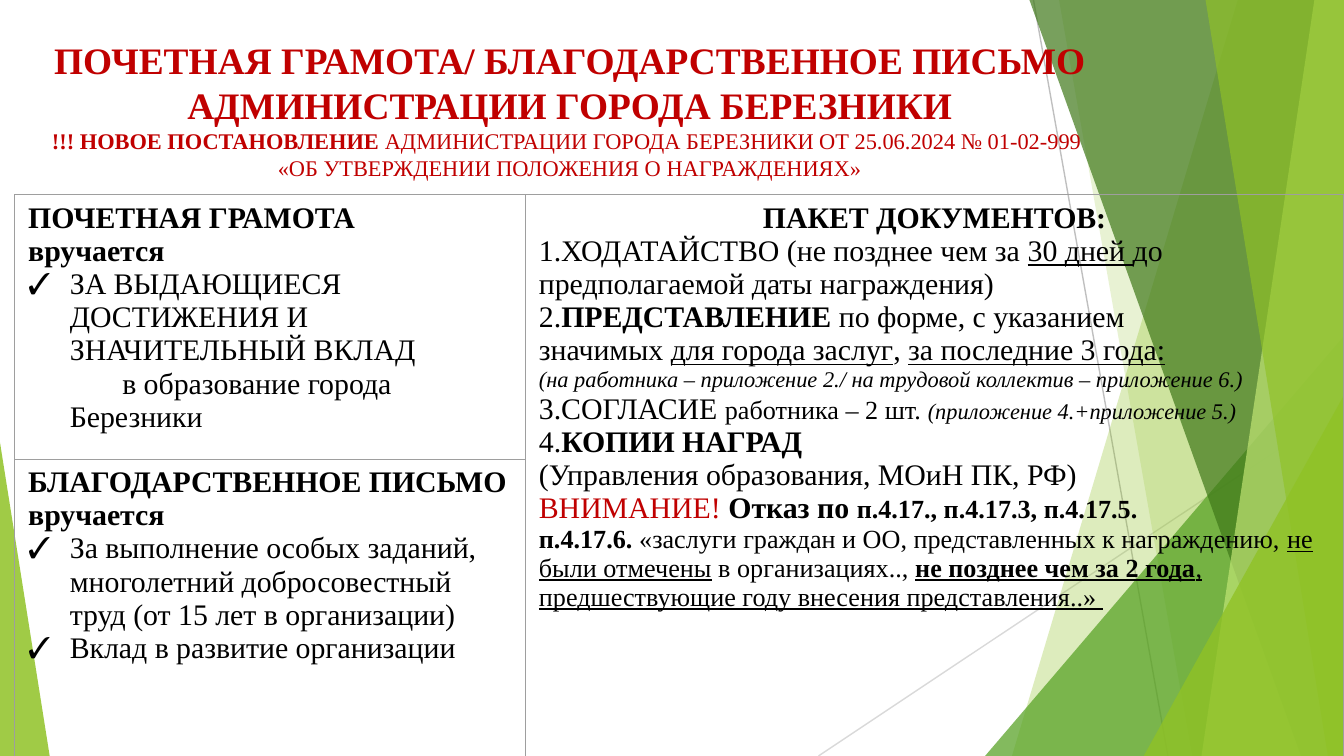
from lxml import etree
from pptx import Presentation
from pptx.dml.color import RGBColor
from pptx.enum.shapes import MSO_CONNECTOR as Connector, MSO_SHAPE as Shape
from pptx.enum.text import PP_ALIGN as Align
from pptx.oxml.ns import qn
from pptx.util import Inches, Pt

FONT = "Times New Roman"
RED, BLACK, GREEN, BORDER = "C00000", "000000", "90C226", "9E9E9E"
WIDTH = 10
HEIGHT = WIDTH * 9 / 16


def color(value):
    return RGBColor.from_string(value)


def paint(shape, fill, opacity):
    """Plain translucent fill without outline or shadow."""
    shape.shadow.inherit = False
    shape.line.fill.background()
    shape.fill.solid()
    shape.fill.fore_color.rgb = color(fill)
    tint = shape.fill._xPr.find(qn("a:solidFill"))[0]
    etree.SubElement(tint, qn("a:alpha"), val=str(opacity * 1000))


def add_line(slide, start, end, stroke):
    ends = [Inches(value) for value in (*start, *end)]
    line = slide.shapes.add_connector(Connector.STRAIGHT, *ends)
    line.line.color.rgb = color(stroke)
    line.line.width = Pt(0.75)
    etree.SubElement(line._element.spPr, qn("a:effectLst"))


def add_band(slide, top_x, bottom_x, fill, opacity):
    """Full-height band from a slanted left edge to the right slide edge."""
    points = [(top_x, 0), (WIDTH, 0), (WIDTH, HEIGHT), (bottom_x, HEIGHT)]
    points = [(Inches(x), Inches(y)) for x, y in points]
    builder = slide.shapes.build_freeform(*points[0])
    builder.add_line_segments(points[1:], close=True)
    paint(builder.convert_to_shape(), fill, opacity)


def add_triangle(slide, left, top, width, apex, fill, opacity):
    """Triangle standing on the bottom edge of the slide."""
    box = [Inches(value) for value in (left, top, width, HEIGHT - top)]
    triangle = slide.shapes.add_shape(Shape.ISOSCELES_TRIANGLE, *box)
    triangle.adjustments[0] = apex
    paint(triangle, fill, opacity)


def add_run(paragraph, text, size=16, style="", ink=BLACK):
    """Style letters: b bold, i italic, u underlined."""
    run = paragraph.add_run()
    run.text = text
    font = run.font
    font.name, font.size = FONT, Pt(size)
    font.bold, font.italic, font.underline = (key in style for key in "biu")
    font.color.rgb = color(ink)


def set_indent(paragraph, margin, first=0):
    properties = paragraph._p.get_or_add_pPr()
    properties.set("marL", str(Inches(margin)))
    properties.set("indent", str(Inches(first)))
    return properties


def fill_text(frame, paragraphs):
    """Each paragraph is a kind and a list of runs."""
    for index, (kind, runs) in enumerate(paragraphs):
        paragraph = frame.add_paragraph() if index else frame.paragraphs[0]
        if kind in ("title", "center"):
            paragraph.alignment = Align.CENTER
        if kind == "title":
            set_indent(paragraph, 0.12)
        elif kind == "check":
            properties = set_indent(paragraph, 0.31, -0.31)
            etree.SubElement(properties, qn("a:buFont"), typeface=FONT)
            etree.SubElement(properties, qn("a:buChar"), char="✓")
        elif kind == "continued":
            set_indent(paragraph, 0.31, 0.39)
        for run in runs:
            add_run(paragraph, *run)


def style_cell(cell):
    cell.fill.background()
    properties = cell._tc.get_or_add_tcPr()
    for index, side in enumerate(("lnL", "lnR", "lnT", "lnB")):
        border = etree.Element(qn(f"a:{side}"), w=str(Pt(0.75)))
        solid = etree.SubElement(border, qn("a:solidFill"))
        etree.SubElement(solid, qn("a:srgbClr"), val=BORDER)
        properties.insert(index, border)


TITLE = [
    ("title", [("ПОЧЕТНАЯ ГРАМОТА/ БЛАГОДАРСТВЕННОЕ ПИСЬМО", 20, "b", RED)]),
    ("title", [("АДМИНИСТРАЦИИ ГОРОДА БЕРЕЗНИКИ", 20, "b", RED)]),
    ("title", [("!!! НОВОЕ ПОСТАНОВЛЕНИЕ", 12, "b", RED),
               (" АДМИНИСТРАЦИИ ГОРОДА БЕРЕЗНИКИ ОТ 25.06.2024 № 01-02-999 ",
                12, "", RED)]),
    ("title", [("«ОБ УТВЕРЖДЕНИИ ПОЛОЖЕНИЯ О НАГРАЖДЕНИЯХ»", 12, "", RED)]),
]
CERTIFICATE = [
    ("plain", [("ПОЧЕТНАЯ ГРАМОТА", 16, "b")]),
    ("plain", [("вручается", 16, "b")]),
    ("check", [("ЗА ВЫДАЮЩИЕСЯ ДОСТИЖЕНИЯ И ЗНАЧИТЕЛЬНЫЙ ВКЛАД",)]),
    ("continued", [("в образование города Березники",)]),
]
GRATITUDE = [
    ("plain", [("БЛАГОДАРСТВЕННОЕ ПИСЬМО вручается", 16, "b")]),
    ("check", [("За выполнение особых заданий, многолетний добросовестный "
                "труд (от 15 лет в организации)",)]),
    ("check", [("Вклад в развитие организации",)]),
]
DOCUMENTS = [
    ("center", [("ПАКЕТ ДОКУМЕНТОВ:", 16, "b")]),
    ("plain", [("1.ХОДАТАЙСТВО (не позднее чем за ",), ("30 дней ", 16, "u"),
               ("до предполагаемой даты награждения)",)]),
    ("plain", [("2.",), ("ПРЕДСТАВЛЕНИЕ", 16, "b"),
               (" по форме, с указанием",)]),
    ("plain", [("значимых ",), ("для города заслуг", 16, "u"), (", ",),
               ("за последние 3 года:", 16, "u")]),
    ("plain", [("(на работника – приложение 2./ на трудовой коллектив – "
                "приложение 6.)", 12, "i")]),
    ("plain", [("3.СОГЛАСИЕ ",), ("работника – 2 шт. ", 14),
               ("(приложение 4.+приложение 5.)", 12, "i")]),
    ("plain", [("4.",), ("КОПИИ НАГРАД", 16, "b")]),
    ("plain", [("(Управления образования, МОиН ПК, РФ)",)]),
    ("plain", [("ВНИМАНИЕ! ", 16, "", RED), ("Отказ по ", 16, "b"),
               ("п.4.17., п.4.17.3, п.4.17.5.", 14, "b")]),
    ("plain", [("п.4.17.6. ", 14, "b"),
               ("«заслуги граждан и ОО, представленных к награждению, ", 14),
               ("не были отмечены", 14, "u"), (" в организациях.., ", 14),
               ("не позднее чем за 2 года", 14, "bu"),
               (", предшествующие году внесения представления..» ", 14, "u")]),
]


def add_background(slide):
    add_line(slide, (7.69, 0), (8.69, HEIGHT), "BFBFBF")
    add_line(slide, (WIDTH, 3.02), (6.09, HEIGHT), "D9D9D9")
    add_band(slide, 9.21, 7.53, GREEN, 30)
    add_band(slide, 7.88, 8.87, GREEN, 20)
    add_triangle(slide, 7.33, 2.5, 2.67, 1, "54A021", 72)
    add_band(slide, 7.66, 9.68, "3F7819", 70)
    add_band(slide, 9.78, 8.94, "C0E474", 70)
    add_band(slide, 8.97, 9.88, GREEN, 65)
    add_triangle(slide, 8.51, 2.94, 1.49, 1, GREEN, 80)
    add_triangle(slide, 0, 3.29, 0.37, 0, GREEN, 85)


def add_title(slide):
    box = [Inches(value) for value in (0.11, 0.18, 8.14, 4.82)]
    frame = slide.shapes.add_textbox(*box).text_frame
    frame.word_wrap = True
    frame.margin_left = frame.margin_right = Inches(0.1)
    frame.margin_top = frame.margin_bottom = Inches(0.1)
    fill_text(frame, TITLE)


def add_award_table(slide):
    columns, rows = (3.8, 6.09), (1.86, 1.92)
    box = [Inches(value) for value in (0.11, 1.45, sum(columns), sum(rows))]
    table = slide.shapes.add_table(2, 2, *box).table
    table.first_row = table.horz_banding = False
    for column, width in zip(table.columns, columns):
        column.width = Inches(width)
    for row, height in zip(table.rows, rows):
        row.height = Inches(height)
    for cell in table.iter_cells():
        style_cell(cell)
    table.cell(0, 1).merge(table.cell(1, 1))
    fill_text(table.cell(0, 0).text_frame, CERTIFICATE)
    fill_text(table.cell(1, 0).text_frame, GRATITUDE)
    fill_text(table.cell(0, 1).text_frame, DOCUMENTS)


def main():
    presentation = Presentation()
    presentation.slide_width = Inches(WIDTH)
    presentation.slide_height = Inches(HEIGHT)
    slide = presentation.slides.add_slide(presentation.slide_layouts[6])
    add_background(slide)
    add_title(slide)
    add_award_table(slide)
    presentation.save("out.pptx")


if __name__ == "__main__":
    main()
